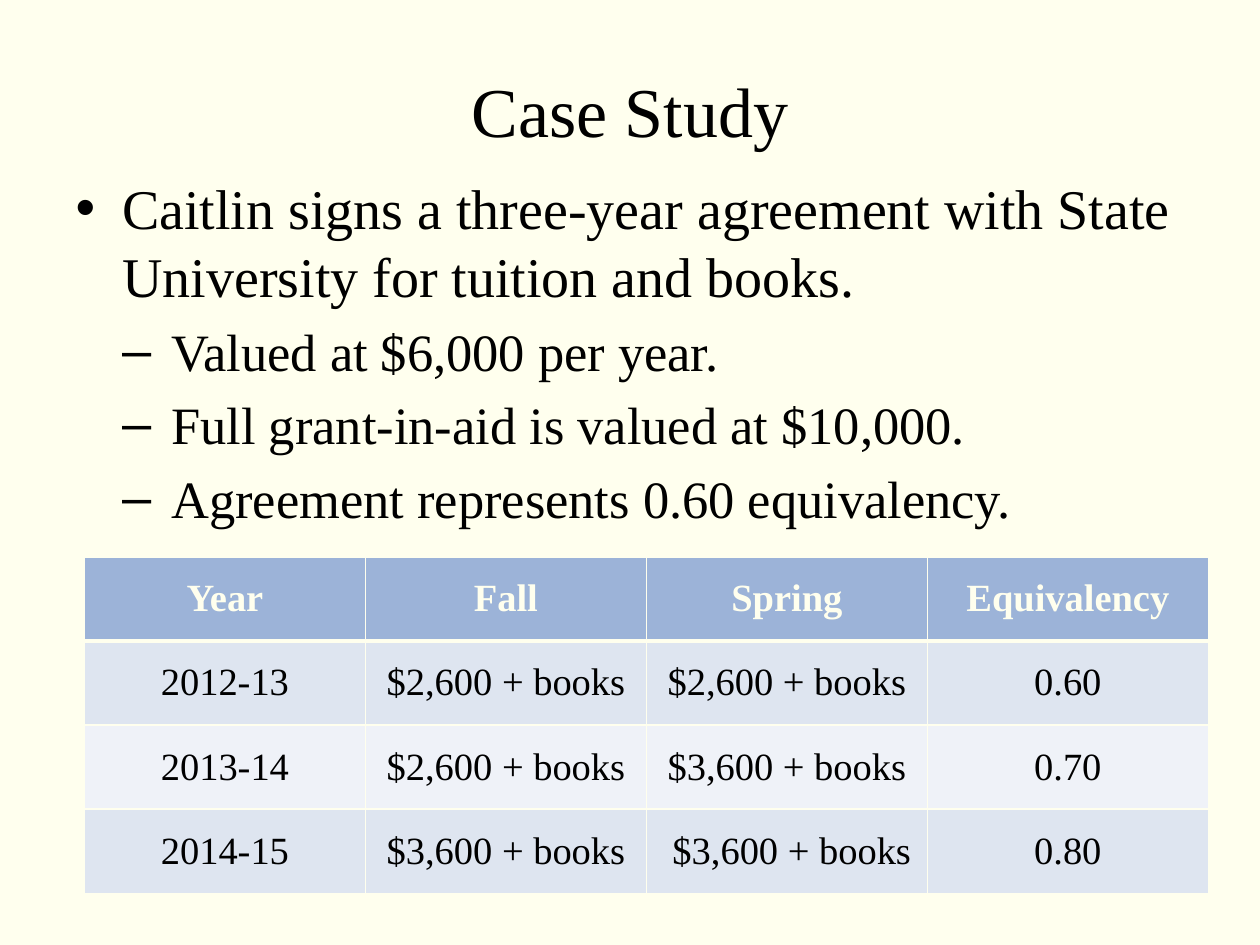
"""Build the Case Study slide with a bulleted summary and an equivalency table."""
import pptx
import pptx.dml.color
import pptx.enum.text
import pptx.oxml
import pptx.oxml.ns
import pptx.util
from pptx.util import Inches

RGBColor = pptx.dml.color.RGBColor
CREAM = RGBColor(0xFF, 0xFF, 0xEE)
BLACK = RGBColor(0x00, 0x00, 0x00)
HEADER = RGBColor(0x9C, 0xB3, 0xD8)
BAND_DARK = RGBColor(0xDE, 0xE5, 0xF0)
BAND_LIGHT = RGBColor(0xEF, 0xF2, 0xF8)
FONT = "Times New Roman"
CENTER = pptx.enum.text.PP_ALIGN.CENTER
MIDDLE = pptx.enum.text.MSO_ANCHOR.MIDDLE
NO_FIT = pptx.enum.text.MSO_AUTO_SIZE.NONE
NS = pptx.oxml.ns.nsdecls("a")


def add_run(p, text, size, color=BLACK, bold=False):
    r = p.add_run()
    r.text = text
    r.font.name = FONT
    r.font.size = pptx.util.Pt(size)
    r.font.bold = bold
    r.font.color.rgb = color


def add_border(cell, side, width):
    cell._tc.get_or_add_tcPr().append(pptx.oxml.parse_xml(
        f'<a:ln{side} {NS} w="{pptx.util.Pt(width)}"><a:solidFill>'
        f'<a:srgbClr val="{CREAM}"/></a:solidFill></a:ln{side}>'))


prs = pptx.Presentation()
prs.slide_width = Inches(10)
prs.slide_height = Inches(7.5)
s = prs.slides.add_slide(prs.slide_layouts[1])
s.background.fill.solid()
s.background.fill.fore_color.rgb = CREAM

title = s.shapes.title
title.left, title.top = Inches(0.5), Inches(0.33)
title.width, title.height = Inches(9), Inches(1.08)
tf = title.text_frame
tf.auto_size = NO_FIT
tf.vertical_anchor = MIDDLE
p = tf.paragraphs[0]
p.alignment = CENTER
add_run(p, "Case Study", 40)

body = s.placeholders[1]
body.left, body.top = Inches(0.5), Inches(1.33)
body.width, body.height = Inches(9.17), Inches(5.92)
tf = body.text_frame
tf.auto_size = NO_FIT
bullets = [
    (0, "Caitlin signs a three-year agreement with State University for tuition and books."),
    (1, "Valued at $6,000 per year."),
    (1, "Full grant-in-aid is valued at $10,000."),
    (1, "Agreement represents 0.60 equivalency."),
]
levels = [("•", 0.37, 0.37, 32), ("–", 0.76, 0.39, 30)]
for i, (level, text) in enumerate(bullets):
    mark, margin, hanging, size = levels[level]
    p = tf.paragraphs[0] if i == 0 else tf.add_paragraph()
    p.level = level
    pPr = p._p.get_or_add_pPr()
    pPr.set("marL", str(Inches(margin)))
    pPr.set("indent", str(-Inches(hanging)))
    pPr.append(pptx.oxml.parse_xml(f'<a:buChar {NS} char="{mark}"/>'))
    p.space_before = pptx.util.Pt(0.2 * size if i else 0)
    add_run(p, text, size)

rows = [
    ("Year", "Fall", "Spring", "Equivalency"),
    ("2012-13", "$2,600 + books", "$2,600 + books", "0.60"),
    ("2013-14", "$2,600 + books", "$3,600 + books", "0.70"),
    ("2014-15", "$3,600 + books", " $3,600 + books", "0.80"),
]
fills = [HEADER, BAND_DARK, BAND_LIGHT, BAND_DARK]
table = s.shapes.add_table(
    len(rows), len(rows[0]), Inches(0.67), Inches(4.42), Inches(8.92), Inches(2.67)).table
for i, row in enumerate(rows):
    for j, text in enumerate(row):
        cell = table.cell(i, j)
        cell.vertical_anchor = MIDDLE
        add_border(cell, "L", 1)
        add_border(cell, "R", 1)
        add_border(cell, "T", 3 if i == 1 else 1)
        add_border(cell, "B", 3 if i == 0 else 1)
        cell.fill.solid()
        cell.fill.fore_color.rgb = fills[i]
        p = cell.text_frame.paragraphs[0]
        p.alignment = CENTER
        add_run(p, text, 22, CREAM if i == 0 else BLACK, i == 0)

prs.save("out.pptx")
